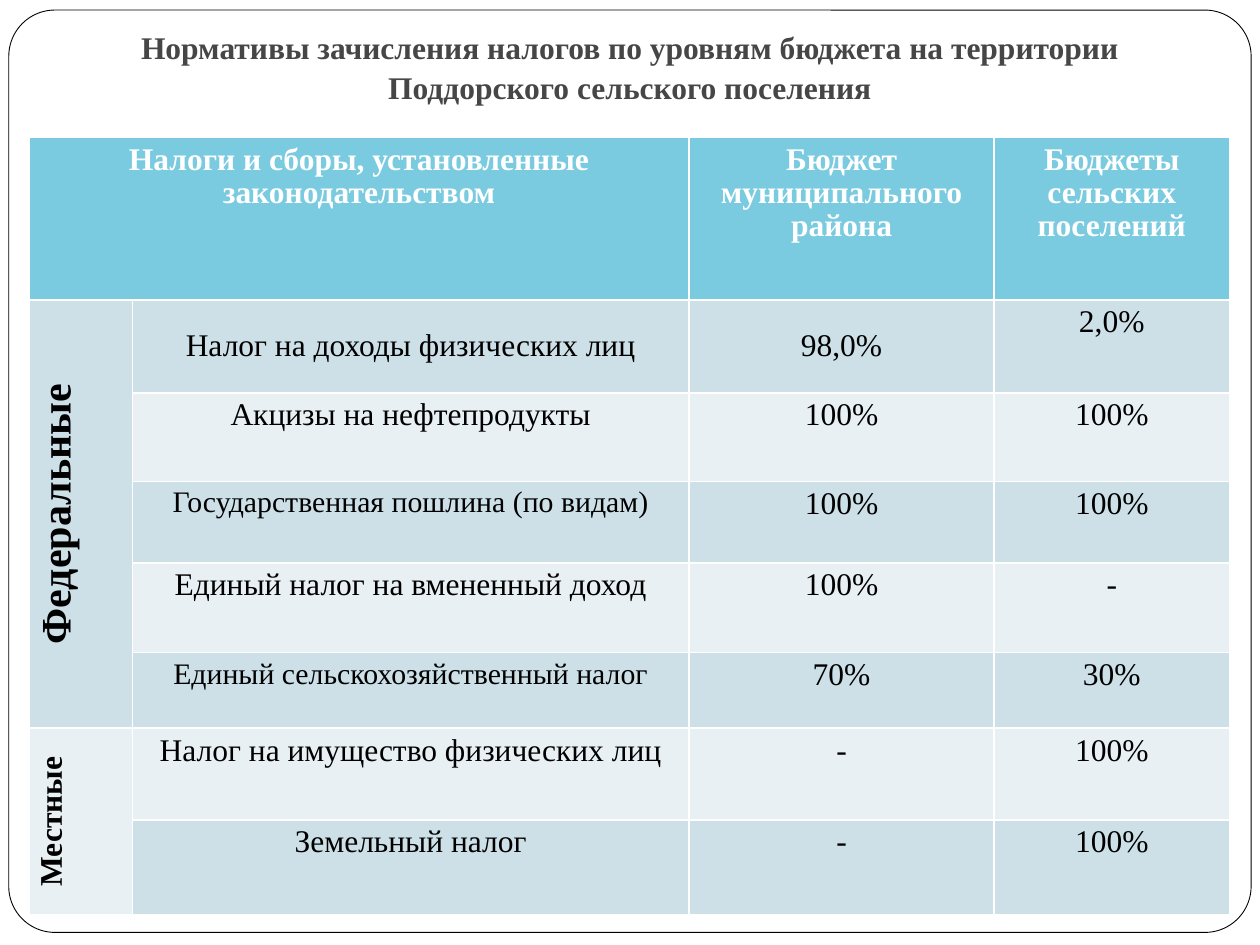
"""Build the slide on tax distribution between budget levels."""
from pptx import Presentation
from pptx.dml.color import RGBColor
from pptx.enum.shapes import MSO_SHAPE as Shape
from pptx.enum.text import MSO_ANCHOR as Anchor, MSO_AUTO_SIZE as AutoSize, PP_ALIGN as Align
from pptx.util import Inches, Pt

WHITE = RGBColor(0xFF, 0xFF, 0xFF)
BLACK = RGBColor(0x00, 0x00, 0x00)
GRAY = RGBColor(0x46, 0x46, 0x46)
HEADER_BLUE = RGBColor(0x7A, 0xCB, 0xE0)
BAND_DARK = RGBColor(0xCD, 0xE0, 0xE8)
BAND_LIGHT = RGBColor(0xE8, 0xF0, 0xF4)


def write(frame, text, size=18, color=BLACK, bold=False, spacing=0.95):
    para = frame.paragraphs[0]
    para.alignment = Align.CENTER
    para.line_spacing = spacing
    span = para.add_run()
    span.text = text
    span.font.name = "Times New Roman"
    span.font.size = Pt(size)
    span.font.bold = bold
    span.font.color.rgb = color


deck = Presentation()
deck.slide_width, deck.slide_height = Inches(10), Inches(7.5)
page = deck.slides.add_slide(deck.slide_layouts[5])

border = page.shapes.add_shape(
    Shape.ROUNDED_RECTANGLE, Inches(0.07), Inches(0.08), Inches(9.86), Inches(7.32))
border.adjustments[0] = 0.05
border.shadow.inherit = False
border.fill.solid()
border.fill.fore_color.rgb = WHITE
border.line.color.rgb = BLACK
border.line.width = Pt(0.5)

title = page.shapes.title
border._element.addnext(title._element)
title.left, title.top = Inches(0.31), Inches(0.39)
title.width, title.height = Inches(9.38), Inches(0.55)
frame = title.text_frame
frame.word_wrap = True
frame.auto_size = AutoSize.NONE
frame.vertical_anchor = Anchor.BOTTOM
frame.margin_bottom = Inches(0.1)
write(frame, "Нормативы зачисления налогов по уровням бюджета на территории "
      "Поддорского сельского поселения", color=GRAY, bold=True, spacing=1.05)

HEADERS = {
    0: "Налоги и сборы, установленные законодательством",
    2: "Бюджет муниципального района",
    3: "Бюджеты сельских поселений",
}
TAXES = [
    ("Налог на доходы физических лиц", "98,0%", "2,0%"),
    ("Акцизы на нефтепродукты", "100%", "100%"),
    ("Государственная пошлина (по видам)", "100%", "100%"),
    ("Единый налог на вмененный доход", "100%", "-"),
    ("Единый сельскохозяйственный налог", "70%", "30%"),
    ("Налог на имущество физических лиц", "-", "100%"),
    ("Земельный налог", "-", "100%"),
]
SMALLER_ROWS = (3, 5)
GROUPS = [("Федеральные", 1, 5, 24, Anchor.TOP), ("Местные", 6, 7, 18, Anchor.MIDDLE)]
COLUMN_WIDTHS = [0.82, 4.42, 2.42, 1.87]
ROW_HEIGHTS = [1.29, 0.74, 0.7, 0.65, 0.71, 0.6, 0.73, 0.75]

table = page.shapes.add_table(
    len(ROW_HEIGHTS), len(COLUMN_WIDTHS), Inches(0.23), Inches(1.09),
    Inches(sum(COLUMN_WIDTHS)), Inches(sum(ROW_HEIGHTS))).table
for column, width in zip(table.columns, COLUMN_WIDTHS):
    column.width = Inches(width)
for row_number, (row, height) in enumerate(zip(table.rows, ROW_HEIGHTS)):
    row.height = Inches(height)
    band = BAND_DARK if row_number % 2 else BAND_LIGHT
    for cell in row.cells:
        cell.fill.solid()
        cell.fill.fore_color.rgb = band if row_number else HEADER_BLUE

table.cell(0, 0).merge(table.cell(0, 1))
for column_number, text in HEADERS.items():
    write(table.cell(0, column_number).text_frame, text, color=WHITE, bold=True)

for name, first, last, size, anchor in GROUPS:
    cell = table.cell(first, 0)
    cell.merge(table.cell(last, 0))
    cell.fill.fore_color.rgb = BAND_DARK if first % 2 else BAND_LIGHT
    cell.vertical_anchor = anchor
    cell._tc.get_or_add_tcPr().set("vert", "vert270")
    write(cell.text_frame, name, size=size, bold=True)

for row_number, values in enumerate(TAXES, start=1):
    for column_number, text in enumerate(values, start=1):
        smaller = column_number == 1 and row_number in SMALLER_ROWS
        write(table.cell(row_number, column_number).text_frame, text, size=17 if smaller else 18)
for column_number in (1, 2):
    table.cell(1, column_number).vertical_anchor = Anchor.MIDDLE

deck.save("out.pptx")
